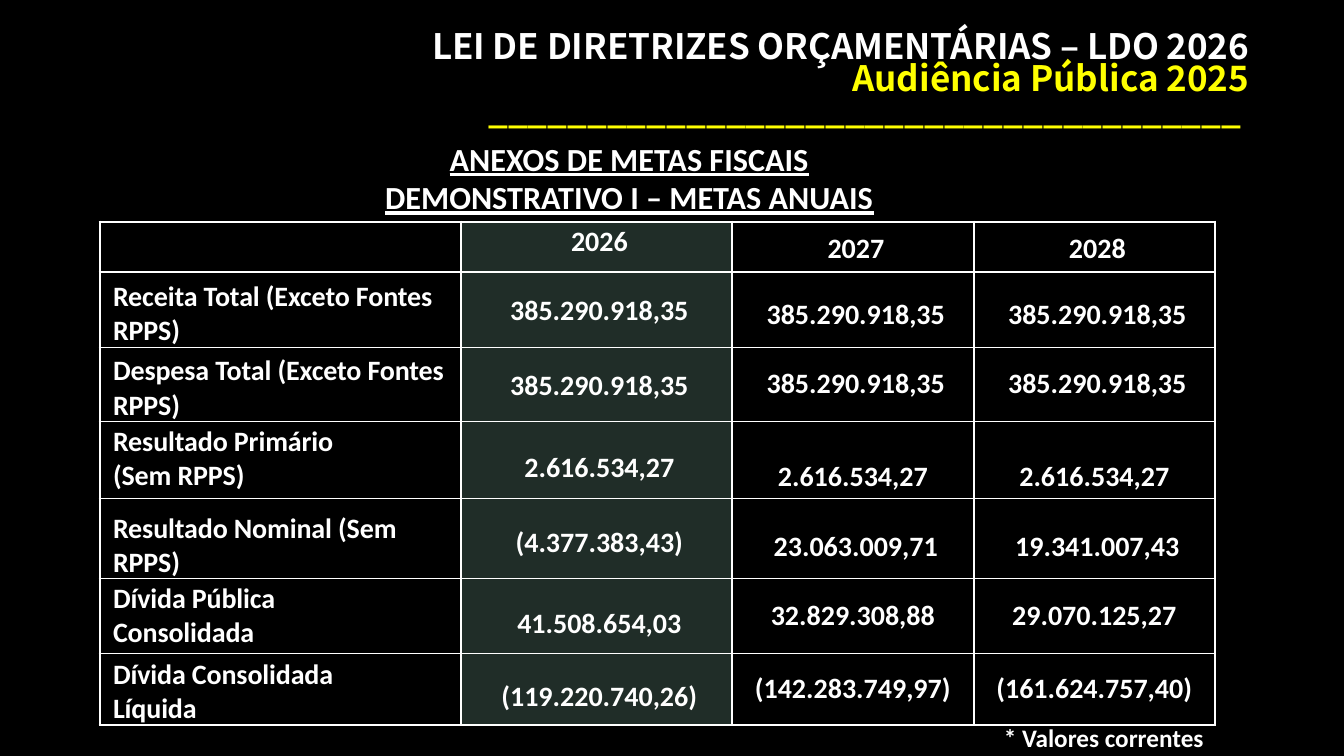
from dataclasses import dataclass

import pptx
import pptx.dml.color
import pptx.enum.text
import pptx.oxml
import pptx.oxml.ns
import pptx.util

ALIGN = pptx.enum.text.PP_ALIGN
ANCHOR = pptx.enum.text.MSO_ANCHOR
SCALE = 914400 / 100.8


@dataclass(frozen=True)
class Theme:
    back: str = "000000"
    text: str = "FFFFFF"
    accent: str = "FFFF00"
    shade: str = "202D28"
    face: str = "Calibri"
    display: str = "Noto Sans CJK JP"
    title: int = 25
    head: int = 23
    body: int = 20
    note: int = 18
    thin: float = 1
    thick: float = 2.25


THEME = Theme()


def px(count):
    return pptx.util.Emu(round(count * SCALE))


def color(code):
    return pptx.dml.color.RGBColor.from_string(code)


def write(para, text, size=THEME.body, face=THEME.face, fill=THEME.text,
          line=False, align=ALIGN.LEFT, track=0, left=0, right=0):
    """Add one formatted run to a paragraph."""
    para.alignment = align
    props = para._p.get_or_add_pPr()
    props.set("marL", str(px(left)))
    props.set("marR", str(px(right)))
    run = para.add_run()
    run.text = text
    font = run.font
    font.size, font.name = pptx.util.Pt(size), face
    font.bold, font.underline = True, line
    font.color.rgb = color(fill)
    if track:
        run._r.get_or_add_rPr().set("spc", str(track))
    return run


class Page:
    def __init__(self, deck, theme):
        self.theme = theme
        self.slide = deck.slides.add_slide(deck.slide_layouts[6])
        back = self.slide.background.fill
        back.solid()
        back.fore_color.rgb = color(theme.back)

    def box(self, x, y, wide, high, wrap=True):
        frame = self.slide.shapes.add_textbox(
            px(x), px(y), px(wide), px(high)).text_frame
        frame.word_wrap = wrap
        return frame

    def table(self, x, y, cols, rows):
        frame = self.slide.shapes.add_table(
            len(rows), len(cols), px(x), px(y), px(sum(cols)), px(sum(rows)))
        grid = frame.table
        grid.first_row = grid.horz_banding = False
        for col, wide in zip(grid.columns, cols):
            col.width = px(wide)
        for row, high in zip(grid.rows, rows):
            row.height = px(high)
        return grid

    def cell(self, cell, top, anchor, fill):
        cell.margin_left = cell.margin_right = cell.margin_bottom = 0
        cell.margin_top = px(top)
        cell.vertical_anchor = anchor
        cell.fill.solid()
        cell.fill.fore_color.rgb = color(fill)
        return cell.text_frame.paragraphs[0]

    def edge(self, cell, outer):
        """Draw the four borders; those named in outer are thick."""
        props = cell._tc.get_or_add_tcPr()
        for spot, side in enumerate("LRTB"):
            points = self.theme.thick if side in outer else self.theme.thin
            props.insert(spot, pptx.oxml.parse_xml(
                f'<a:ln{side} {pptx.oxml.ns.nsdecls("a")} '
                f'w="{pptx.util.Pt(points)}"><a:solidFill>'
                f'<a:srgbClr val="{self.theme.text}"/></a:solidFill></a:ln{side}>'))


# Content: label, right indent, top insets of the three kinds of cell, values
YEARS = ["2026", "2027", "2028"]
GOALS = [
    ("Receita Total (Exceto Fontes RPPS)", 0, (8, 3, 11),
     ["385.290.918,35", "385.290.918,35", "385.290.918,35"]),
    ("Despesa Total (Exceto Fontes RPPS)", 0, (7, 3, 0),
     ["385.290.918,35", "385.290.918,35", "385.290.918,35"]),
    ("Resultado Primário (Sem RPPS)", 91, (3, 15, 34),
     ["2.616.534,27", "2.616.534,27", "2.616.534,27"]),
    ("Resultado Nominal (Sem RPPS)", 0, (13, 8, 16),
     ["(4.377.383,43)", "23.063.009,71", "19.341.007,43"]),
    ("Dívida Pública Consolidada", 91, (3, 15, 0),
     ["41.508.654,03", "32.829.308,88", "29.070.125,27"]),
    ("Dívida Consolidada Líquida", 91, (4, 15, 0),
     ["(119.220.740,26)", "(142.283.749,97)", "(161.624.757,40)"]),
]


def main():
    deck = pptx.Presentation()
    deck.slide_width, deck.slide_height = px(1344), px(756)
    page = Page(deck, THEME)

    # Title
    frame = page.box(100, 34, 1159, 146)
    frame.margin_top = frame.margin_bottom = 0
    para = frame.paragraphs[0]
    para.line_spacing = 0.76
    style = dict(size=THEME.title, face=THEME.display, align=ALIGN.RIGHT)
    write(para, "LEI DE DIRETRIZES ORÇAMENTÁRIAS – LDO 2026", track=-5, **style)
    para.add_line_break()
    write(para, "Audiência Pública 2025", fill=THEME.accent, **style)
    para.add_line_break()
    write(para, "_" * 38 + " ", fill=THEME.accent, **style)

    # Table of yearly goals
    rows = [50, 73, 73, 77, 78, 75, 69]
    grid = page.table(100, 222, [361, 271, 242, 241], rows)
    lines = [("", 0, (0, 3, 10), YEARS)] + GOALS
    for r, (label, right, tops, values) in enumerate(lines):
        for c, text in enumerate([label] + values):
            cell = grid.cell(r, c)
            middle = r > 0 and c > 0
            para = page.cell(cell, tops[min(c, 2)],
                             ANCHOR.MIDDLE if middle else ANCHOR.TOP,
                             THEME.shade if c == 1 else THEME.back)
            if c == 0 and text:
                write(para, text, left=13, right=right, track=-10)
            elif c > 0:
                flush = r in (3, 5, 6) and c > 1
                write(para, text, align=ALIGN.CENTER, left=0 if flush else 6)
            outer = (("L" if c == 0 else "") + ("R" if c == 3 else "")
                     + ("T" if r == 0 else "") + ("B" if r == 6 else ""))
            page.edge(cell, outer)

    # Heading over the table
    frame = page.box(142, 134, 975, 89)
    style = dict(size=THEME.head, line=True, align=ALIGN.CENTER)
    write(frame.paragraphs[0], "ANEXOS DE METAS FISCAIS", **style)
    write(frame.add_paragraph(), "DEMONSTRATIVO I – METAS ANUAIS", **style)

    # Footnote
    frame = page.box(993, 717, 222, 40, wrap=False)
    write(frame.paragraphs[0], "* Valores correntes", size=THEME.note, left=1)

    deck.save("out.pptx")


if __name__ == "__main__":
    main()
